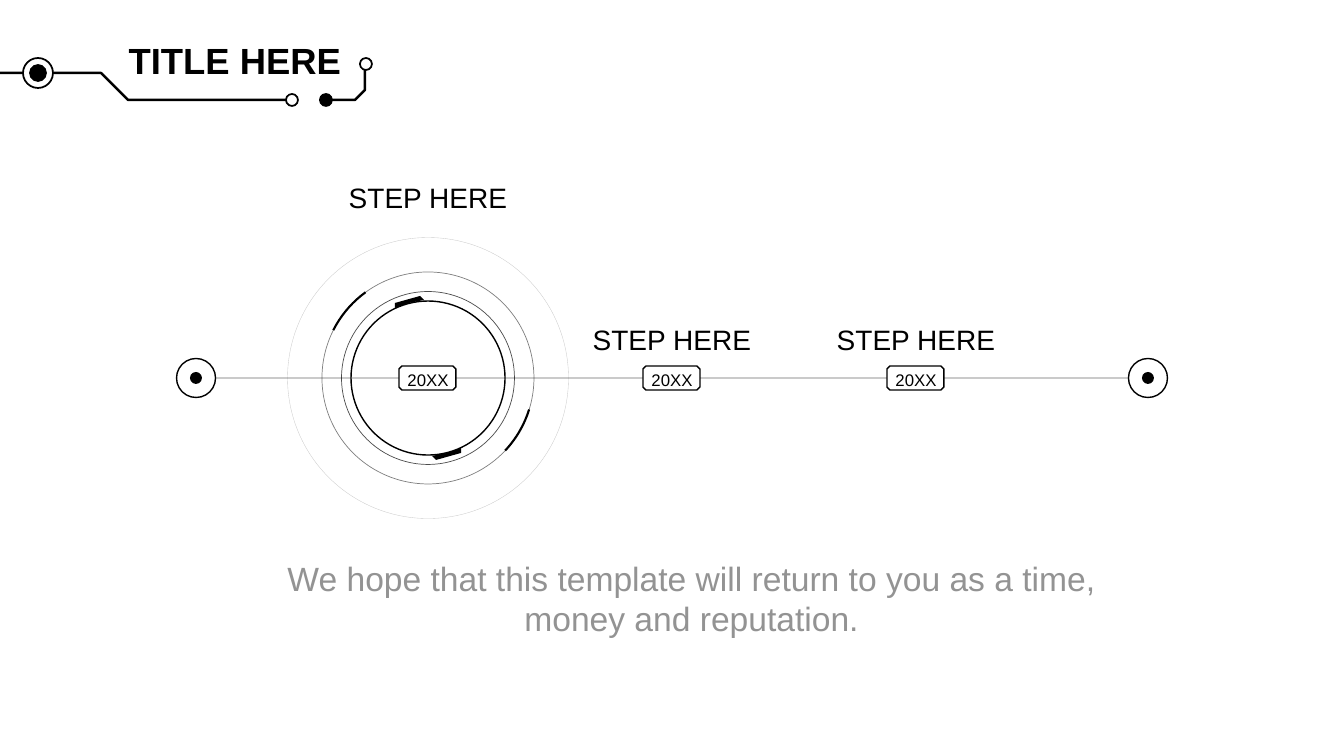
from lxml import etree
from pptx import Presentation
from pptx.dml.color import RGBColor
from pptx.enum.shapes import MSO_CONNECTOR, MSO_SHAPE
from pptx.enum.text import MSO_AUTO_SIZE, PP_ALIGN
from pptx.oxml.ns import qn
from pptx.util import Pt

OVAL = MSO_SHAPE.OVAL
ARC = MSO_SHAPE.ARC
STRAIGHT = MSO_CONNECTOR.STRAIGHT
CENTER = PP_ALIGN.CENTER
GROW = MSO_AUTO_SIZE.SHAPE_TO_FIT_TEXT

PX = 914400 / 100.8
COLORS = {"ink": "000000", "paper": "FFFFFF", "muted": "939393"}


def px(*lengths):
    return [round(length * PX) for length in lengths]


def paint(shape, fill=None, width=0, opacity=100):
    if hasattr(shape, "fill"):
        shape.shadow.inherit = False
        if fill:
            shape.fill.solid()
            shape.fill.fore_color.rgb = RGBColor.from_string(COLORS[fill])
        else:
            shape.fill.background()
    if not width:
        shape.line.fill.background()
        return
    shape.line.color.rgb = RGBColor.from_string(COLORS["ink"])
    shape.line.width = Pt(width)
    if opacity < 100:
        color = shape.line._ln.find(".//" + qn("a:srgbClr"))
        etree.SubElement(color, qn("a:alpha"), val=str(opacity * 1000))


presentation = Presentation()
presentation.slide_width, presentation.slide_height = px(1344, 756)
slide = presentation.slides.add_slide(presentation.slide_layouts[6])
shapes = slide.shapes

axis_y = 378
step_centers = [428 + 244 * index for index in range(3)]
dial_x = step_centers[0]
end_centers = [196, 1148]

timeline = shapes.add_connector(STRAIGHT, *px(216, axis_y, 1129, axis_y))
paint(timeline, width=0.5, opacity=58)
etree.SubElement(timeline._element.spPr, qn("a:effectLst"))

outlines = []
for x in step_centers:
    left, right, top, bottom, cut = x - 29, x + 28, axis_y - 12, axis_y + 12, 3
    badge = [
        (right - cut, top), (left + cut, top), (left, top + cut), (left, bottom - cut),
        (left + cut, bottom), (right - cut, bottom), (right, bottom - cut), (right, top + cut),
    ]
    outlines.append((badge, True, "paper", 1))

dash_offsets = [(-33, -75), (-8, -82), (-4, -78), (-19, -75), (-33, -70)]
for sign in (1, -1):
    dash = [(dial_x + sign * x, axis_y + sign * y) for x, y in dash_offsets]
    outlines.append((dash, True, "ink", 0))

outlines += [
    ([(-2, 73), (101, 73), (128, 100), (286, 100)], False, None, 1.75),
    ([(365, 68), (365, 90), (355, 100), (332, 100)], False, None, 1.75),
]
for points, closed, fill, width in outlines:
    builder = shapes.build_freeform(*points[0], scale=PX)
    builder.add_line_segments(points[1:], close=closed)
    paint(builder.convert_to_shape(), fill, width)

circles = [
    (dial_x, axis_y, 281, None, 0.25, 20),
    (dial_x, axis_y, 173, None, 0.5, 70),
    (dial_x, axis_y, 212, None, 0.5, 50),
    (dial_x, axis_y, 154, None, 1, 100),
    (38, 73, 30, "paper", 1.25, 100),
    (38, 73, 16, "ink", 1.25, 100),
    (292, 100, 12, "paper", 1.25, 100),
    (326, 100, 12, "ink", 1.25, 100),
    (366, 64, 12, "paper", 1.25, 100),
]
for x in end_centers:
    circles += [(x, axis_y, 39, None, 1, 100), (x, axis_y, 12, "ink", 0, 100)]
for x, y, size, fill, width, opacity in circles:
    circle = shapes.add_shape(OVAL, *px(x - size / 2, y - size / 2, size, size))
    paint(circle, fill, width, opacity)

for start, end in [(124.07, 140.36), (10.39, 25.93)]:
    arc = shapes.add_shape(ARC, *px(dial_x - 106, axis_y - 106, 212, 212))
    arc.adjustments[0] = start
    arc.adjustments[1] = end
    paint(arc, width=1.5)

texts = [
    ("TITLE HERE", (111, 33, 248, 54), "ink", {"size": Pt(26), "bold": True}),
    (
        "We hope that this template will return to you as a time, money and reputation.",
        (235, 553, 913, 92), "muted", {"size": Pt(24)},
    ),
]
for x, label_top in zip(step_centers, [176, 318, 318]):
    texts += [
        ("20XX", (x - 32, 365, 64, 30), "ink", {"size": Pt(12)}),
        ("STEP HERE", (x - 95, label_top, 190, 44), "ink", {"size": Pt(20)}),
    ]
for text, box, color, font_format in texts:
    frame = shapes.add_textbox(*px(*box)).text_frame
    frame.word_wrap = True
    frame.auto_size = GROW
    paragraph = frame.paragraphs[0]
    paragraph.alignment = CENTER
    run = paragraph.add_run()
    run.text = text
    run.font.color.rgb = RGBColor.from_string(COLORS[color])
    for name, value in {"name": "Arial", **font_format}.items():
        setattr(run.font, name, value)

presentation.save("out.pptx")
